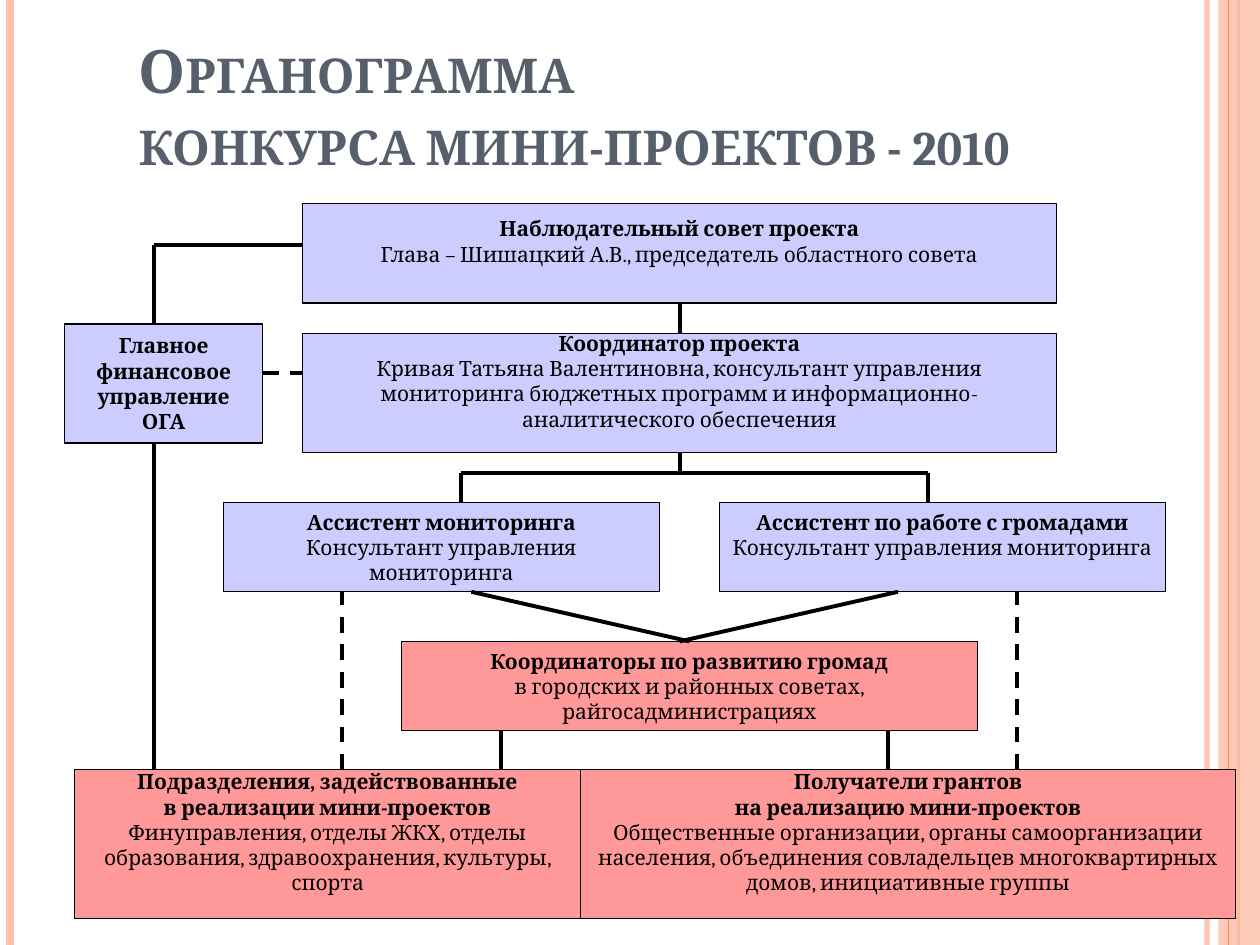
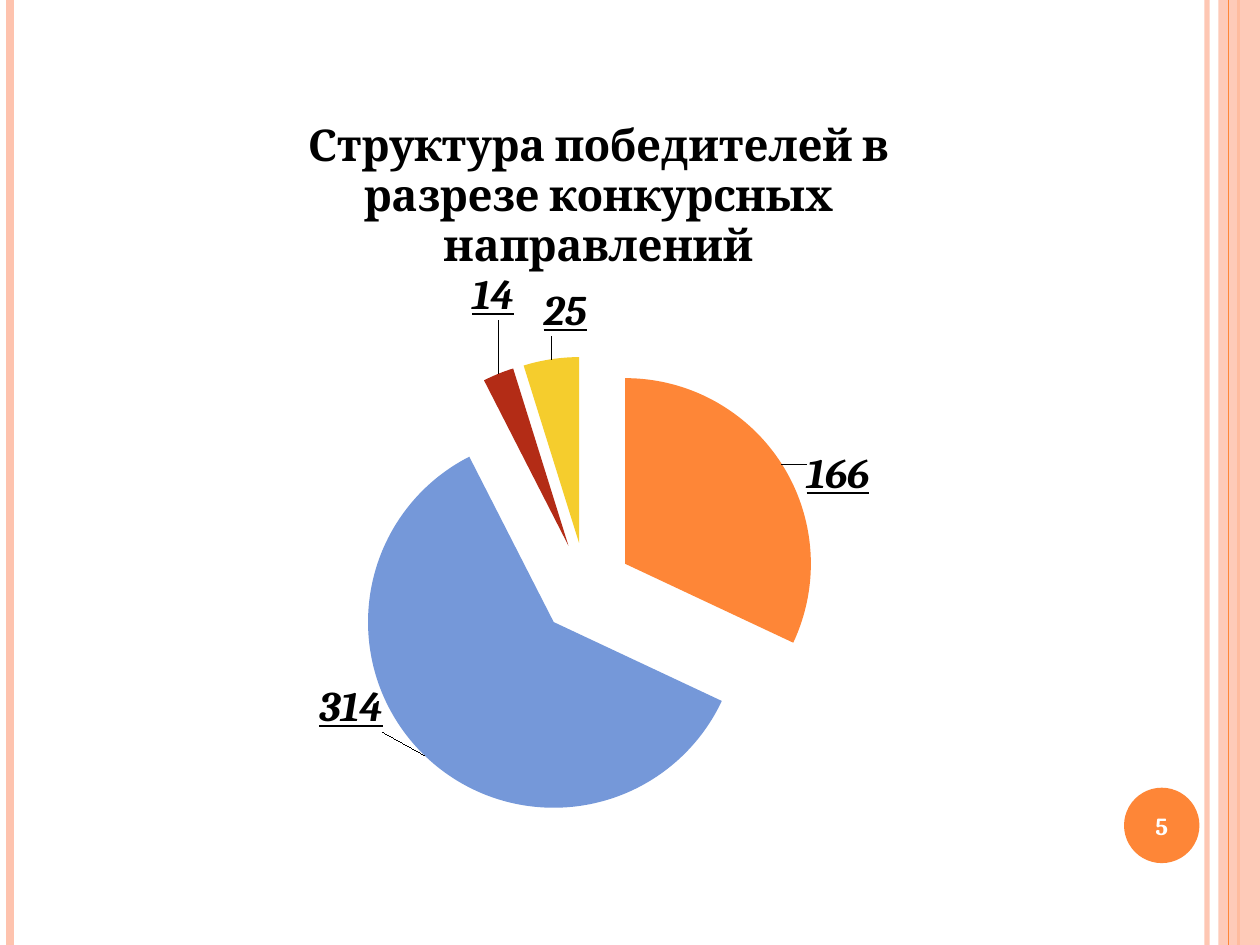
import pptx
import pptx.chart.data
import pptx.dml.color
import pptx.enum.chart
import pptx.enum.dml
import pptx.enum.shapes
import pptx.enum.text
import pptx.oxml.ns
import pptx.util
from lxml import etree

Cm = pptx.util.Cm
Pt = pptx.util.Pt
RGBColor = pptx.dml.color.RGBColor
SHAPE = pptx.enum.shapes.MSO_SHAPE
ALIGN = pptx.enum.text.PP_ALIGN
ANCHOR = pptx.enum.text.MSO_ANCHOR
qn = pptx.oxml.ns.qn

BLACK = RGBColor(0x00, 0x00, 0x00)
WHITE = RGBColor(0xFF, 0xFF, 0xFF)
SLATE = RGBColor(0x57, 0x5F, 0x6D)
PEACH = RGBColor(0xFE, 0xC3, 0xAE)
ORANGE = RGBColor(0xFE, 0x86, 0x37)
BLUE = RGBColor(0x75, 0x98, 0xD9)
RED = RGBColor(0xB3, 0x2C, 0x16)
YELLOW = RGBColor(0xF5, 0xCD, 0x2D)
LILAC = RGBColor(0xCC, 0xCC, 0xFF)
PINK = RGBColor(0xFF, 0x99, 0x99)

FONT = "Cambria"
SLIDE_WIDTH, SLIDE_HEIGHT = 25.4, 19.05
TEXT_LINE = 0.5  # height of one line in a chart box, cm


# Shared helpers
def apply(target, **values):
    for name, value in values.items():
        setattr(target, name, value)


def format_font(font, size, color, **extra):
    apply(font, name=FONT, size=Pt(size), **extra)
    font.color.rgb = color


def set_alpha(shape, percent):
    for color in shape._element.spPr.iter(qn("a:srgbClr")):
        etree.SubElement(color, qn("a:alpha"), val=str(percent * 1000))


def draw_line(slide, start, end, color=BLACK, width=2.25, dashed=False):
    line = slide.shapes.add_connector(
        pptx.enum.shapes.MSO_CONNECTOR.STRAIGHT,
        *(Cm(value) for value in (*start, *end)))
    line.line.color.rgb = color
    line.line.width = Pt(width)
    if dashed:
        line.line.dash_style = pptx.enum.dml.MSO_LINE.DASH
    etree.SubElement(line._element.spPr, qn("a:effectLst"))
    return line


def draw_shape(slide, kind, box, fill, outline=None):
    shape = slide.shapes.add_shape(kind, *(Cm(value) for value in box))
    shape.shadow.inherit = False
    shape.fill.solid()
    shape.fill.fore_color.rgb = fill
    if outline is None:
        shape.line.fill.background()
    else:
        shape.line.color.rgb = outline
        shape.line.width = Pt(0.75)
    return shape


def draw_frame(slide):
    """Vertical stripes along both edges of the slide."""
    def stripe(x, color, width):
        return draw_line(slide, (x, 0), (x, SLIDE_HEIGHT), color, width)

    set_alpha(stripe(24.33, PEACH, 3), 93)
    stripe(0.2, PEACH, 4.5)
    stripe(24.97, ORANGE, 1.5)
    band_left = 24.56
    band = draw_shape(slide, SHAPE.RECTANGLE,
                      (band_left, 0, SLIDE_WIDTH - band_left, SLIDE_HEIGHT), PEACH)
    set_alpha(band, 87)
    stripe(24.77, ORANGE, 0.75)


def draw_title(slide, box, lines):
    title = slide.shapes.title
    left, top, width, height = (Cm(value) for value in box)
    apply(title, left=left, top=top, width=width, height=height)
    frame = title.text_frame
    apply(frame, vertical_anchor=ANCHOR.BOTTOM, word_wrap=True,
          auto_size=pptx.enum.text.MSO_AUTO_SIZE.NONE)
    frame.text = "\v".join(lines)
    paragraph = frame.paragraphs[0]
    paragraph.alignment = ALIGN.LEFT
    for run in paragraph.runs:
        format_font(run.font, 34.2, SLATE, bold=True)
        run.font._element.set("cap", "small")


def draw_page_number(slide, box, number):
    badge = draw_shape(slide, SHAPE.OVAL, box, ORANGE)
    frame = badge.text_frame
    apply(frame, margin_left=0, margin_right=0, margin_top=0, margin_bottom=0,
          vertical_anchor=ANCHOR.MIDDLE)
    paragraph = frame.paragraphs[0]
    paragraph.text = number
    paragraph.alignment = ALIGN.CENTER
    format_font(paragraph.font, 14, WHITE, bold=True)


# Organisation chart
def draw_org_chart(slide, left, top):
    def at(x, y):
        return left + x, top + y

    def unit(x, y, width, height, fill, headings, details=None, raised=True):
        shape = draw_shape(slide, SHAPE.RECTANGLE, (*at(x, y), width, height),
                           fill, BLACK)
        frame = shape.text_frame
        apply(frame, word_wrap=True, vertical_anchor=ANCHOR.MIDDLE,
              margin_left=Cm(0.25), margin_right=Cm(0.25), margin_top=0,
              margin_bottom=Cm(TEXT_LINE if raised else 0))
        texts = [(text, True) for text in headings]
        if details:
            texts.append((details, False))
        for index, (text, bold) in enumerate(texts):
            paragraph = frame.add_paragraph() if index else frame.paragraphs[0]
            paragraph.text = text
            paragraph.alignment = ALIGN.CENTER
            format_font(paragraph.font, 12, BLACK, bold=bold)
        return shape

    def link(start, end, dashed=False):
        return draw_line(slide, at(*start), at(*end), dashed=dashed)

    # Levels, from top to bottom
    finance_y, coordinator_y, bus_y = 2.42, 2.62, 5.42
    assistants_y, community_y, bottom_y = 6.02, 8.82, 11.41
    low, high = 1.8, 2.4
    assistants_end, community_end = assistants_y + low, community_y + low
    main_x, main_width = 4.8, 15.2
    middle_x, community_x = main_x + main_width / 2, 12.6

    # Units
    council = unit(main_x, 0, main_width, 2, LILAC, ["Наблюдательный совет проекта"],
                   "Глава – Шишацкий А.В., председатель областного совета")
    coordinator = unit(
        main_x, coordinator_y, main_width, high, LILAC, ["Координатор проекта"],
        "Кривая Татьяна Валентиновна, консультант управления мониторинга "
        "бюджетных программ и информационно-аналитического обеспечения")
    unit(13.2, assistants_y, 9, low, LILAC, ["Ассистент по работе с громадами"],
         "Консультант управления мониторинга")
    unit(3.2, assistants_y, 8.8, low, LILAC, ["Ассистент мониторинга"],
         "Консультант управления мониторинга", raised=False)
    community = unit(6.8, community_y, 11.6, low, PINK,
                     ["Координаторы по развитию громад"],
                     "в городских и районных советах, райгосадминистрациях",
                     raised=False)
    unit(10.41, bottom_y, 13.2, 3, PINK,
         ["Получатели грантов", "на реализацию мини-проектов"],
         "Общественные организации, органы самоорганизации населения, "
         "объединения совладельцев многоквартирных домов, инициативные группы")
    unit(0.2, bottom_y, 10.21, 3, PINK,
         ["Подразделения, задействованные", "в реализации мини-проектов"],
         "Финуправления, отделы ЖКХ, отделы образования, здравоохранения, "
         "культуры, спорта")
    unit(0, finance_y, 4, high, LILAC, ["Главное финансовое управление ОГА"],
         raised=False)

    # Council to coordinator to assistants
    supervision = link((middle_x, 2), (middle_x, coordinator_y))
    supervision.begin_connect(council, 2)
    supervision.end_connect(coordinator, 0)
    link((middle_x, coordinator_y + high), (middle_x, bus_y)).begin_connect(coordinator, 2)
    bus_ends = 8, 17.4
    link((bus_ends[0], bus_y), (bus_ends[1], bus_y))
    for x in bus_ends:
        link((x, bus_y), (x, assistants_y))

    # Assistants to community coordinators and to the bottom row
    link((community_x, community_y), (8.2, assistants_end)).begin_connect(community, 0)
    link((middle_x, community_y), (16.8, assistants_end))
    for x in (5.6, 19.2):
        link((x, bottom_y), (x, assistants_end), dashed=True)
    for x in (8.8, 16.6):
        link((x, bottom_y), (x, community_end))

    # Finance department
    finance_x, council_y = 1.8, 0.82
    link((main_x, council_y), (finance_x, council_y))
    link((finance_x, council_y), (finance_x, finance_y))
    link((finance_x, finance_y + high), (finance_x, bottom_y))
    link((4, 3.41), (main_x, 3.41), dashed=True)


# Winners chart
def set_layout(parent, index, **values):
    for previous in parent.findall(qn("c:layout")):
        parent.remove(previous)
    layout = etree.Element(qn("c:layout"))
    manual = etree.SubElement(layout, qn("c:manualLayout"))
    for name, value in values.items():
        etree.SubElement(manual, qn(f"c:{name}"), val=str(value))
    parent.insert(index, layout)


def draw_winners_chart(slide, box):
    # Value, colour and label offset of each direction
    directions = [
        (166, ORANGE, 0.02, 0.05),
        (314, BLUE, -0.04, -0.1),
        (14, RED, 0.02, -0.06),
        (25, YELLOW, 0.04, -0.02),
    ]
    data = pptx.chart.data.CategoryChartData(number_format="0")
    data.categories = [str(number) for number in range(1, len(directions) + 1)]
    data.add_series("Series 1", [direction[0] for direction in directions])
    chart = slide.shapes.add_chart(pptx.enum.chart.XL_CHART_TYPE.PIE,
                                   *(Cm(value) for value in box), data).chart
    format_font(chart.font, 10, BLACK)
    chart.has_legend = False
    heading = chart.chart_title.text_frame
    heading.text = "Структура победителей в разрезе конкурсных направлений"
    format_font(heading.paragraphs[0].runs[0].font, 25, BLACK, bold=True)
    set_layout(chart.chart_title._element, 1, xMode="edge", yMode="edge",
               x=0.18, y=0.03)

    plot = chart.plots[0]
    plot.vary_by_categories = True
    set_layout(plot._element.getparent(), 0, layoutTarget="inner",
               xMode="edge", yMode="edge", x=0.23, y=0.35, w=0.52, h=0.6)

    winners = plot.series[0]
    winners.data_labels.show_value = True
    label_style = dict(bold=True, italic=True, underline=True)
    format_font(winners.data_labels.font, 24, BLACK, **label_style)
    for index, (_, color, _, _) in enumerate(directions):
        point = winners.points[index]
        point.format.fill.solid()
        point.format.fill.fore_color.rgb = color
        format_font(point.data_label.font, 24, BLACK, **label_style)
        point.data_label.position = pptx.enum.chart.XL_LABEL_POSITION.OUTSIDE_END
    labels = winners._element.iter(qn("c:dLbl"))
    for label, (_, _, shift_x, shift_y) in zip(list(labels), directions):
        set_layout(label, 1, x=shift_x, y=shift_y)

    explosion = etree.Element(qn("c:explosion"), val="25")
    winners._element.find(qn("c:dPt")).addprevious(explosion)


# Slides
def add_organogram_slide(deck):
    slide = deck.slides.add_slide(deck.slide_layouts.get_by_name("Title Only"))
    draw_frame(slide)
    draw_title(slide, (2.54, 0.53, 22.86, 3.18),
               ["Органограмма", "конкурса мини-проектов - 2010"])
    draw_org_chart(slide, 1.3, 4.11)


def add_winners_slide(deck):
    slide = deck.slides.add_slide(deck.slide_layouts.get_by_name("Blank"))
    draw_frame(slide)
    draw_page_number(slide, (22.66, 15.88, 1.52, 1.52), "5")
    draw_winners_chart(slide, (2.7, 1.73, 18.6, 15.6))


def main():
    deck = pptx.Presentation()
    deck.slide_width, deck.slide_height = Cm(SLIDE_WIDTH), Cm(SLIDE_HEIGHT)
    add_organogram_slide(deck)
    add_winners_slide(deck)
    deck.save("out.pptx")


if __name__ == "__main__":
    main()
